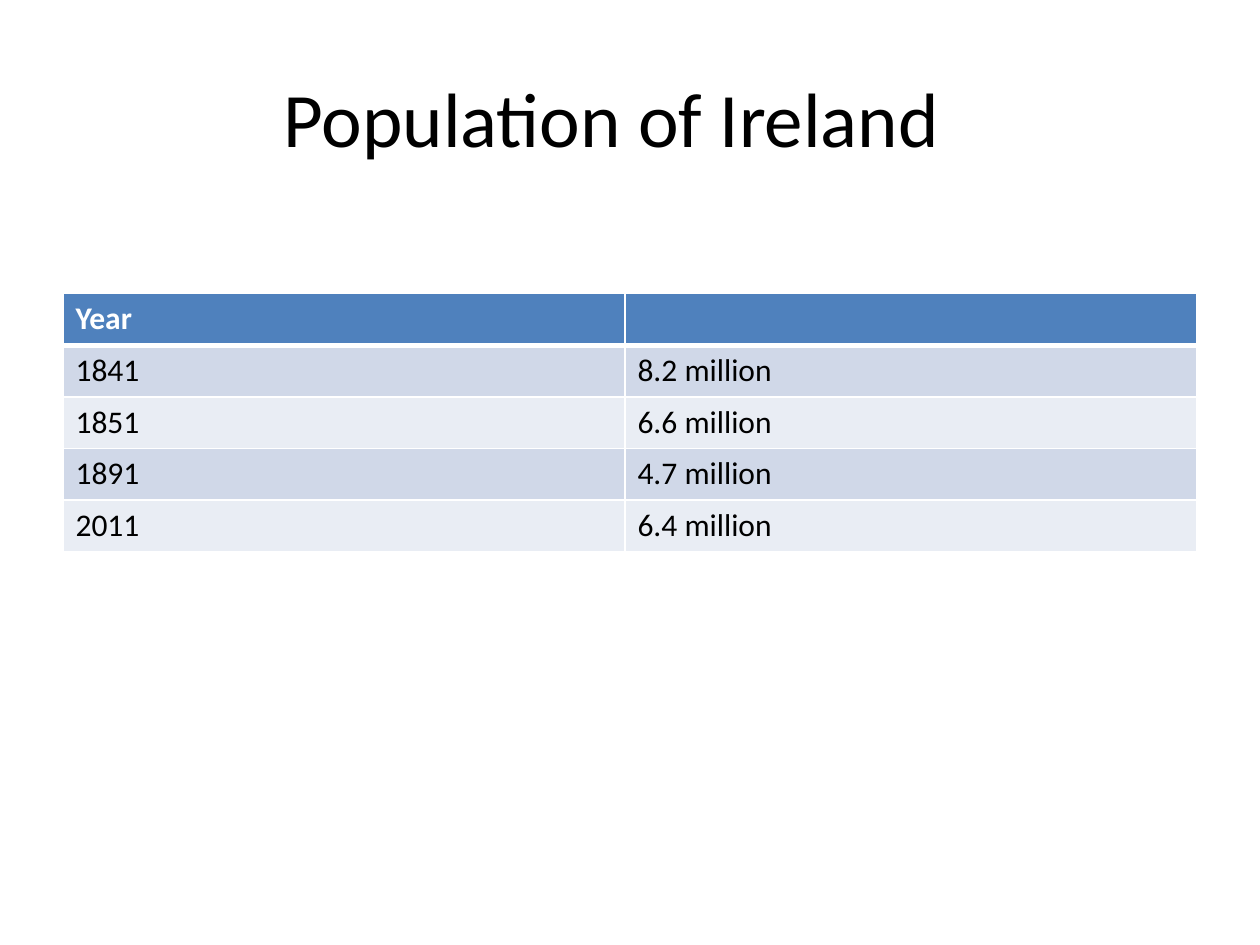
from dataclasses import dataclass

from lxml.etree import SubElement
from pptx import Presentation
from pptx.dml.color import RGBColor
from pptx.enum.text import MSO_ANCHOR as Anchor, PP_ALIGN as Align
from pptx.oxml.ns import qn
from pptx.util import Inches, Pt


@dataclass(frozen=True)
class Theme:
    font: str = "Calibri"
    title_size: int = 44
    body_size: int = 18
    text: str = "000000"
    white: str = "FFFFFF"
    header: str = "4F81BD"
    bands: tuple = ("D0D8E8", "E9EDF4")
    thin_line: int = 1
    thick_line: int = 3


class SlideBuilder:
    def __init__(self, slide, theme):
        self.slide = slide
        self.theme = theme

    def style(self, paragraph, size, color, bold=False):
        font = paragraph.font
        font.name = self.theme.font
        font.size = Pt(size)
        font.bold = bold
        font.color.rgb = RGBColor.from_string(color)

    def title(self, text, left, top, width, height):
        box = self.slide.shapes.add_textbox(
            Inches(left), Inches(top), Inches(width), Inches(height))
        frame = box.text_frame
        frame.word_wrap = True
        frame.vertical_anchor = Anchor.MIDDLE
        paragraph = frame.paragraphs[0]
        paragraph.text = text
        paragraph.alignment = Align.CENTER
        self.style(paragraph, self.theme.title_size, self.theme.text)

    def cell_borders(self, cell, top, bottom):
        """Draw white borders; top and bottom are widths in points."""
        thin = self.theme.thin_line
        properties = cell._tc.get_or_add_tcPr()
        for side, width in (("L", thin), ("R", thin), ("T", top), ("B", bottom)):
            line = SubElement(properties, qn(f"a:ln{side}"), w=str(Pt(width)))
            fill = SubElement(line, qn("a:solidFill"))
            SubElement(fill, qn("a:srgbClr"), val=self.theme.white)

    def table(self, rows, left, top, column_widths, row_height):
        theme = self.theme
        table = self.slide.shapes.add_table(
            len(rows), len(column_widths), Inches(left), Inches(top),
            Inches(sum(column_widths)), Inches(row_height * len(rows))).table
        for column, width in zip(table.columns, column_widths):
            column.width = Inches(width)
        for index, values in enumerate(rows):
            is_header = index == 0
            fill = theme.header if is_header else theme.bands[(index - 1) % 2]
            color = theme.white if is_header else theme.text
            above = theme.thick_line if index == 1 else theme.thin_line
            below = theme.thick_line if is_header else theme.thin_line
            for column, value in enumerate(values):
                cell = table.cell(index, column)
                cell.text = value
                self.style(cell.text_frame.paragraphs[0],
                           theme.body_size, color, is_header)
                self.cell_borders(cell, above, below)
                cell.fill.solid()
                cell.fill.fore_color.rgb = RGBColor.from_string(fill)


def main():
    presentation = Presentation()
    presentation.slide_width = Inches(10)
    presentation.slide_height = Inches(7.5)
    slide = presentation.slides.add_slide(presentation.slide_layouts[6])
    builder = SlideBuilder(slide, Theme())

    # The trailing tab sets the centred title slightly to the left.
    builder.title("Population of Ireland\t", 0.5, 0.3, 9, 1.25)
    population = [
        ("Year", ""),
        ("1841", "8.2 million"),
        ("1851", "6.6 million"),
        ("1891", "4.7 million"),
        ("2011", "6.4 million"),
    ]
    builder.table(population, 0.5, 2.33, (4.46, 4.54), 0.41)
    presentation.save("out.pptx")


if __name__ == "__main__":
    main()
